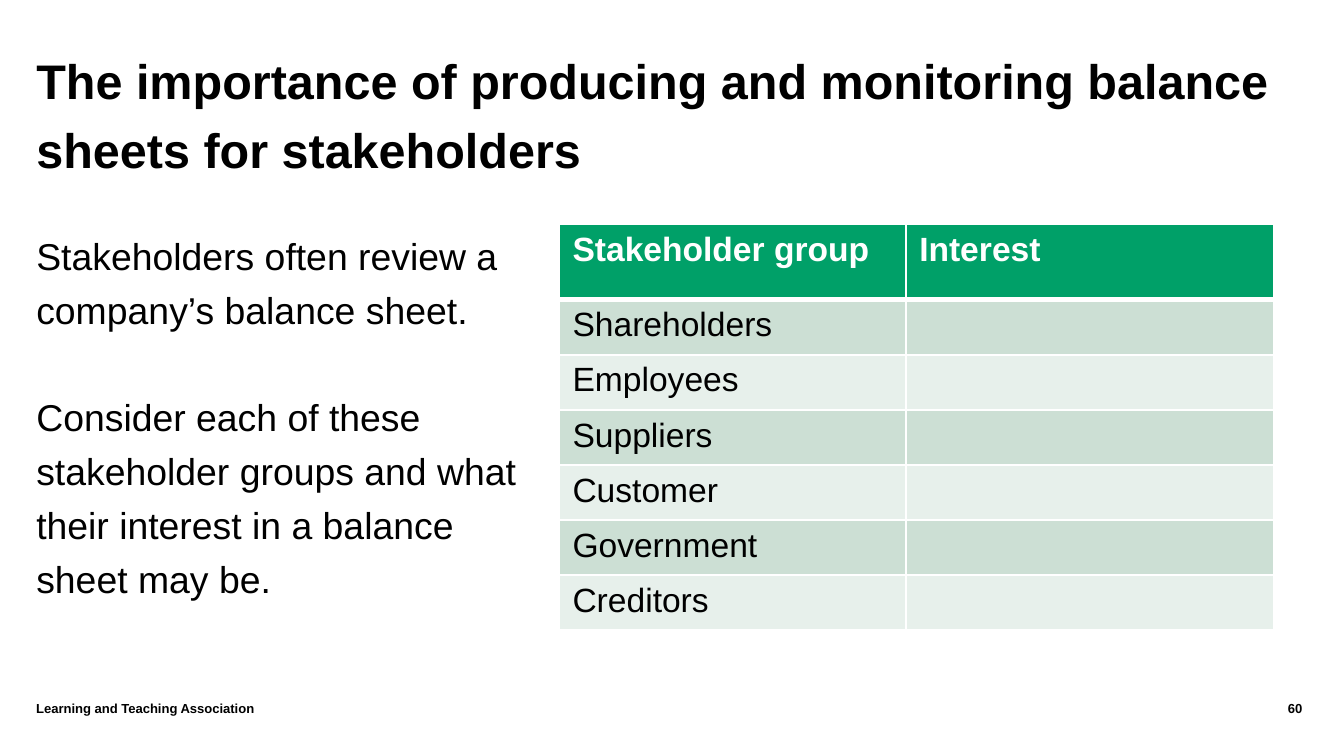
from typing import NamedTuple

from lxml import etree
from pptx import Presentation
from pptx.dml.color import RGBColor
from pptx.enum.text import MSO_ANCHOR, PP_ALIGN as Align
from pptx.oxml.ns import qn
from pptx.util import Inches, Pt

BLACK = RGBColor(0x00, 0x00, 0x00)
WHITE = RGBColor(0xFF, 0xFF, 0xFF)
GREEN = RGBColor(0x00, 0xA0, 0x68)
MINT = RGBColor(0xCC, 0xDF, 0xD4)
PALE_MINT = RGBColor(0xE7, 0xF0, 0xEB)

FONT = "Arial"
LINE_SPACING = 1.2
SLIDE_WIDTH = 10
MARGIN = 0.27
CONTENT_TOP = 1.67
FOOTER_TOP = 5.21

HEADINGS = ("Stakeholder group", "Interest")
GROUPS = ("Shareholders", "Employees", "Suppliers",
          "Customer", "Government", "Creditors")
COLUMN_WIDTHS = (2.58, 2.74)
HEADING_HEIGHT = 0.56
GROUP_HEIGHT = 0.41


class Box(NamedTuple):
    left: float
    top: float
    width: float
    height: float


def write(frame, *paragraphs: str, size: float, bold: bool = False,
          color: RGBColor = BLACK, align=Align.LEFT,
          line_spacing: float = 1.0, gap: float = 0) -> None:
    """Fill a text frame, with a gap in points between paragraphs."""
    for index, text in enumerate(paragraphs):
        paragraph = frame.add_paragraph() if index else frame.paragraphs[0]
        paragraph.alignment = align
        paragraph.line_spacing = line_spacing
        paragraph.space_before = Pt(gap if index else 0)
        run = paragraph.add_run()
        run.text = text
        run.font.name = FONT
        run.font.size = Pt(size)
        run.font.bold = bold
        run.font.color.rgb = color


def add_text(slide, box: Box, *paragraphs: str, **text_format) -> None:
    frame = slide.shapes.add_textbox(*map(Inches, box)).text_frame
    frame.word_wrap = True
    frame.vertical_anchor = MSO_ANCHOR.TOP
    frame.margin_left = frame.margin_right = 0
    frame.margin_top = frame.margin_bottom = 0
    write(frame, *paragraphs, **text_format)


def set_borders(cell, top: float, bottom: float) -> None:
    """Draw white borders, placed before the cell's fill as the schema asks."""
    properties = cell._tc.get_or_add_tcPr()
    widths = {"a:lnL": 1, "a:lnR": 1, "a:lnT": top, "a:lnB": bottom}
    for position, (tag, width) in enumerate(widths.items()):
        line = etree.Element(qn(tag), w=str(Pt(width)))
        fill = etree.SubElement(line, qn("a:solidFill"))
        etree.SubElement(fill, qn("a:srgbClr"), val=str(WHITE))
        properties.insert(position, line)


def style_cell(cell, fill: RGBColor, top: float = 1, bottom: float = 1) -> None:
    cell.fill.solid()
    cell.fill.fore_color.rgb = fill
    set_borders(cell, top, bottom)


def add_stakeholder_table(slide) -> None:
    box = Box(4.16, CONTENT_TOP, sum(COLUMN_WIDTHS),
              HEADING_HEIGHT + GROUP_HEIGHT * len(GROUPS))
    table = slide.shapes.add_table(
        len(GROUPS) + 1, len(HEADINGS), *map(Inches, box)).table
    for column, width in zip(table.columns, COLUMN_WIDTHS):
        column.width = Inches(width)

    # Heading row
    table.rows[0].height = Inches(HEADING_HEIGHT)
    for cell, heading in zip(table.rows[0].cells, HEADINGS):
        write(cell.text_frame, heading, size=18, bold=True, color=WHITE)
        style_cell(cell, GREEN, bottom=3)

    # One banded row per group, with the interest left to fill in
    for number, group in enumerate(GROUPS, start=1):
        row = table.rows[number]
        row.height = Inches(GROUP_HEIGHT)
        write(row.cells[0].text_frame, group, size=18)
        for cell in row.cells:
            style_cell(cell, MINT if number % 2 else PALE_MINT,
                       top=3 if number == 1 else 1)


def main() -> None:
    deck = Presentation()
    deck.slide_width = Inches(SLIDE_WIDTH)
    deck.slide_height = Inches(SLIDE_WIDTH * 9 / 16)
    slide = deck.slides.add_slide(deck.slide_layouts[6])

    # Title
    add_text(slide, Box(MARGIN, 0.29, 9.21, 0.74),
             "The importance of producing and monitoring balance sheets "
             "for stakeholders",
             size=26, bold=True, line_spacing=LINE_SPACING)

    # Task
    add_text(slide, Box(MARGIN, CONTENT_TOP, 3.69, 3.16),
             "Stakeholders often review a company’s balance sheet.",
             "Consider each of these stakeholder groups and what their "
             "interest in a balance sheet may be.",
             size=20, line_spacing=LINE_SPACING, gap=28.75)

    add_stakeholder_table(slide)

    # Footer
    add_text(slide, Box(MARGIN, FOOTER_TOP, 8.43, 0.3),
             "Learning and Teaching Association", size=7, bold=True)
    add_text(slide, Box(8.7, FOOTER_TOP, 0.99, 0.3),
             "60", size=7, bold=True, align=Align.RIGHT)

    deck.save("out.pptx")


if __name__ == "__main__":
    main()
